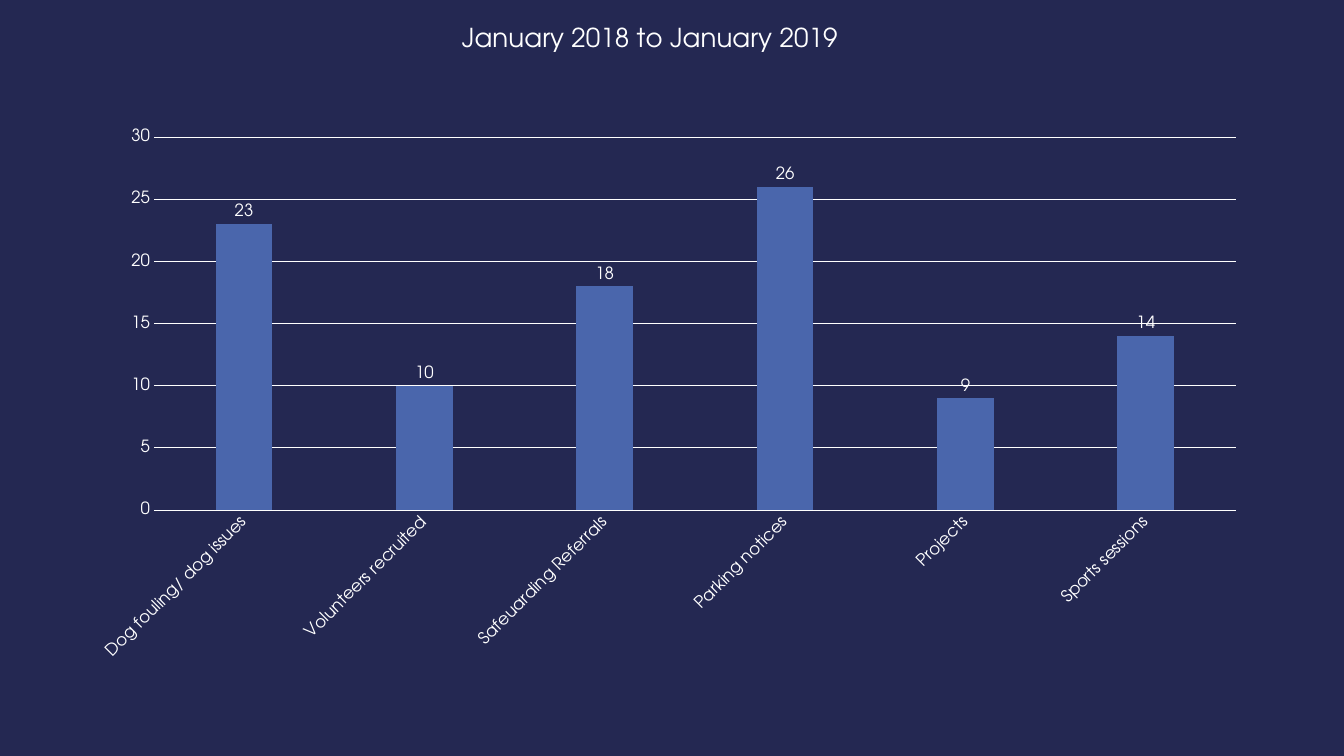
from lxml import etree
from pptx import Presentation
from pptx.chart.data import CategoryChartData
from pptx.dml.color import RGBColor
from pptx.enum.chart import XL_CHART_TYPE as ChartType, XL_LABEL_POSITION as LabelPos, XL_TICK_MARK as Tick
from pptx.oxml import parse_xml
from pptx.oxml.ns import nsdecls, qn
from pptx.util import Inches, Pt

NAVY = RGBColor(0x24, 0x28, 0x52)
BLUE = RGBColor(0x4A, 0x66, 0xAC)
WHITE = RGBColor(0xFF, 0xFF, 0xFF)
FONT = "TeX Gyre Adventor"

TITLE = "January 2018 to January 2019"
ACTIVITIES = {
    "Dog fouling/ dog issues": 23,
    "Volunteers recruited": 10,
    "Safeuarding Referrals": 18,
    "Parking notices": 26,
    "Projects": 9,
    "Sports sessions": 14,
}


def style_font(font, size):
    font.name = FONT
    font.size = Pt(size)
    font.bold = False
    font.color.rgb = WHITE


def style_line(line):
    line.color.rgb = WHITE
    line.width = Pt(0.75)


def manual_layout(inner=False, **fractions):
    layout = parse_xml(f"<c:layout {nsdecls('c')}><c:manualLayout/></c:layout>")
    settings = {"layoutTarget": "inner"} if inner else {}
    settings.update(xMode="edge", yMode="edge", **fractions)
    for tag, value in settings.items():
        etree.SubElement(layout[0], qn(f"c:{tag}"), val=str(value))
    return layout


def replace_layout(parent, layout, index):
    for old in parent.findall(qn("c:layout")):
        parent.remove(old)
    parent.insert(index, layout)


def add_chart_title(chart):
    chart.has_title = True
    title = chart.chart_title
    heading = title.text_frame.paragraphs[0]
    heading.text = TITLE
    style_font(heading.runs[0].font, 18.6)
    title.include_in_layout = False
    replace_layout(title._element, manual_layout(x=0.34, y=0.05), 1)


def style_axes(chart):
    for axis in (chart.category_axis, chart.value_axis):
        axis.major_tick_mark = axis.minor_tick_mark = Tick.NONE
        style_font(axis.tick_labels.font, 12)
    activities, counts = chart.category_axis, chart.value_axis
    style_line(activities.format.line)
    activities.tick_labels.font._element.getparent().getparent().getparent().find(
        qn("a:bodyPr")).set("rot", "-2700000")
    counts.format.line.fill.background()
    counts.minimum_scale, counts.maximum_scale, counts.major_unit = 0, 30, 5
    counts.has_major_gridlines = True
    style_line(counts.major_gridlines.format.line)


def style_columns(plot):
    plot.gap_width = 219
    plot.overlap = -27
    plot.vary_by_categories = False
    columns = plot.series[0]
    columns.format.fill.solid()
    columns.format.fill.fore_color.rgb = BLUE
    labels = columns.data_labels
    labels.show_value = True
    labels.position = LabelPos.OUTSIDE_END
    style_font(labels.font, 12)


def add_activity_chart(slide, left, top, width, height):
    data = CategoryChartData()
    data.categories = list(ACTIVITIES)
    data.add_series("Series 1", list(ACTIVITIES.values()))
    chart = slide.shapes.add_chart(
        ChartType.COLUMN_CLUSTERED, Inches(left), Inches(top),
        Inches(width), Inches(height), data).chart
    chart.has_legend = False
    style_font(chart.font, 10)
    add_chart_title(chart)
    style_axes(chart)
    style_columns(chart.plots[0])
    plot_area = chart._chartSpace.chart.plotArea
    replace_layout(plot_area, manual_layout(
        inner=True, x=0.095, y=0.191, w=0.874, h=0.453), 0)


def main():
    deck = Presentation()
    deck.slide_width, deck.slide_height = Inches(13.33), Inches(7.5)
    slide = deck.slides.add_slide(deck.slide_layouts[6])
    slide.background.fill.solid()
    slide.background.fill.fore_color.rgb = NAVY
    add_activity_chart(slide, 0.36, -0.2, 12.28, 8.17)
    deck.save("out.pptx")


if __name__ == "__main__":
    main()
